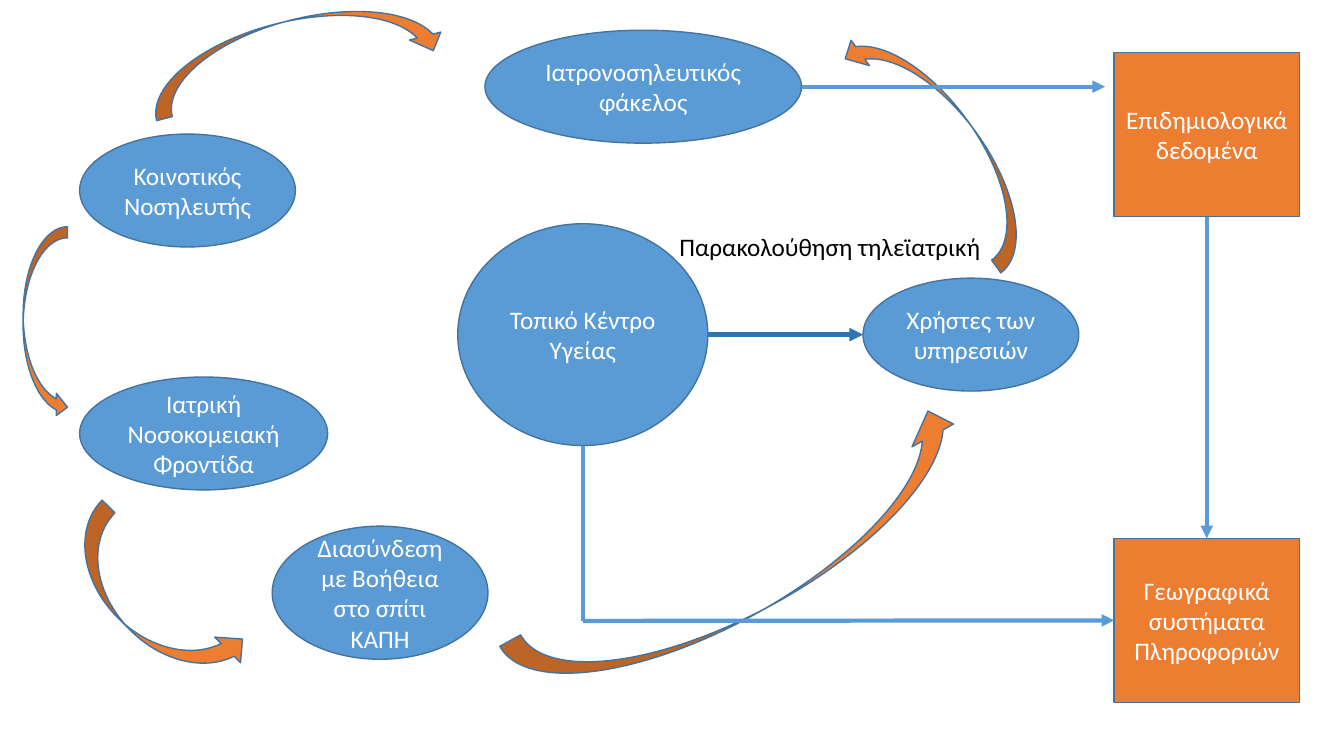
from lxml import etree
from pptx import Presentation
from pptx.dml.color import RGBColor
from pptx.enum.shapes import MSO_CONNECTOR as Connector, MSO_SHAPE as Shape
from pptx.enum.text import MSO_ANCHOR as Anchor, MSO_AUTO_SIZE as AutoSize, PP_ALIGN as Align
from pptx.oxml.ns import qn
from pptx.util import Pt

PX = 9144  # EMU per px, 100 px to the inch
SLIDE_SIZE = (1333, 750)
FONT, TEXT_SIZE = "Calibri", 18

BLUE = RGBColor(0x5B, 0x9B, 0xD5)
DARK_BLUE = RGBColor(0x2E, 0x75, 0xB6)
OUTLINE = RGBColor(0x43, 0x73, 0x9E)
ORANGE = RGBColor(0xED, 0x7D, 0x31)
WHITE = RGBColor(0xFF, 0xFF, 0xFF)
BLACK = RGBColor(0x00, 0x00, 0x00)

# Name: (text, left, top, width, height)
ELLIPSES = {
    "nurse": ("Κοινοτικός Νοσηλευτής", 79, 133, 214, 112),
    "hospital": ("Ιατρική\nΝοσοκομειακή Φροντίδα", 79, 374, 246, 112),
    "record": ("Ιατρονοσηλευτικός φάκελος", 481, 30, 314, 112),
    "centre": ("Τοπικό Κέντρο Υγείας", 454, 222, 248, 220),
    "home help": ("Διασύνδεση με Βοήθεια στο σπίτι ΚΑΠΗ", 270, 522, 214, 132),
    "users": ("Χρήστες των υπηρεσιών", 856, 276, 214, 112),
}
SQUARES = {
    "epidemiology": ("Επιδημιολογικά δεδομένα", 1105, 52, 184, 163),
    "geography": ("Γεωγραφικά συστήματα Πληροφοριών", 1105, 534, 184, 163),
}
TELEMEDICINE = ("Παρακολούθηση τηλεϊατρική", 664, 225, 349, 40)

# Kind, left, top, width, height, rotation
CURVED_ARROWS = [
    (Shape.CURVED_DOWN_ARROW, 143, 20, 299, 64, 345.8),
    (Shape.CURVED_RIGHT_ARROW, 23, 225, 44, 190, 0),
    (Shape.CURVED_RIGHT_ARROW, 116, 490, 72, 214, 314.7),
    (Shape.CURVED_UP_ARROW, 487, 513, 508, 94, 331.2),
    (Shape.CURVED_UP_ARROW, 797, 109, 278, 62, 234),
]

# From, to, colour, width, arrowhead, square joined at the start and at the end
TOP, LEFT, BOTTOM = 0, 1, 2
ELBOW = (578, 616)
LINES = [
    ((702, 332), (856, 332), DARK_BLUE, 3.25, True, None, None),
    ((795, 86), (1096, 86), BLUE, 3, True, None, None),
    ((1197, 215), (1197, 534), BLUE, 3, True, ("epidemiology", BOTTOM), ("geography", TOP)),
    ((578, 442), ELBOW, BLUE, 3, False, None, None),
    (ELBOW, (1105, 616), BLUE, 3, True, None, ("geography", LEFT)),
]


def emu(*lengths):
    return [length * PX for length in lengths]


def write(shape, text, color, align):
    frame = shape.text_frame
    frame.word_wrap = True
    frame.text = text
    for paragraph in frame.paragraphs:
        paragraph.alignment = align
        paragraph.font.name = FONT
        paragraph.font.size = Pt(TEXT_SIZE)
        paragraph.font.color.rgb = color


def add_filled(slide, kind, box, fill):
    shape = slide.shapes.add_shape(kind, *emu(*box))
    shape.shadow.inherit = False
    shape.fill.solid()
    shape.fill.fore_color.rgb = fill
    shape.line.color.rgb = OUTLINE
    shape.line.width = Pt(1)
    return shape


def add_node(slide, kind, node, fill):
    text, *box = node
    shape = add_filled(slide, kind, box, fill)
    write(shape, text, WHITE, Align.CENTER)
    shape.text_frame.vertical_anchor = Anchor.MIDDLE
    return shape


def add_line(slide, start, end, color, width, arrowhead):
    line = slide.shapes.add_connector(Connector.STRAIGHT, *emu(*start, *end))
    line.line.color.rgb = color
    line.line.width = Pt(width)
    if arrowhead:
        etree.SubElement(line.line._get_or_add_ln(), qn("a:tailEnd"), type="triangle")
    etree.SubElement(line._element.spPr, qn("a:effectLst"))
    return line


def main():
    presentation = Presentation()
    presentation.slide_width, presentation.slide_height = emu(*SLIDE_SIZE)
    slide = presentation.slides.add_slide(presentation.slide_layouts[6])

    # People, services and data systems
    for node in ELLIPSES.values():
        add_node(slide, Shape.OVAL, node, BLUE)
    squares = {name: add_node(slide, Shape.RECTANGLE, node, ORANGE)
               for name, node in SQUARES.items()}

    # Telemedicine label
    text, *box = TELEMEDICINE
    label = slide.shapes.add_textbox(*emu(*box))
    write(label, text, BLACK, Align.LEFT)
    label.text_frame.auto_size = AutoSize.SHAPE_TO_FIT_TEXT

    # Cycle of care
    for kind, *box, rotation in CURVED_ARROWS:
        add_filled(slide, kind, box, ORANGE).rotation = rotation

    # Data flow
    for *line_format, begin, end in LINES:
        line = add_line(slide, *line_format)
        if begin:
            line.begin_connect(squares[begin[0]], begin[1])
        if end:
            line.end_connect(squares[end[0]], end[1])

    presentation.save("out.pptx")


if __name__ == "__main__":
    main()
